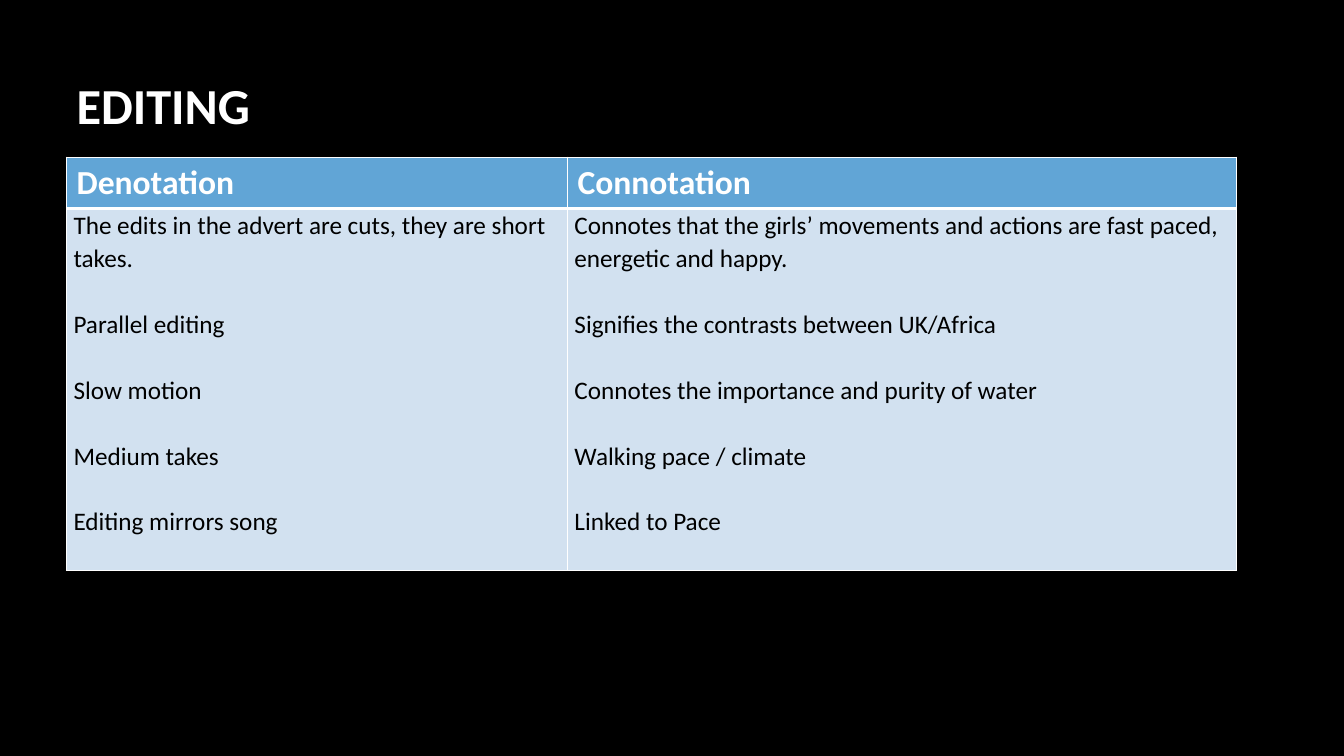
from lxml import etree
from pptx import Presentation
from pptx import util as u
from pptx.dml import color
from pptx.enum import text
from pptx.oxml import ns

GRID = 0.1
SLIDE_COLUMNS, SLIDE_ROWS = 133.33, 75
LEFT_MARGIN = 6.6
TABLE_TOP = 15.6
TABLE_COLUMNS = (49.7, 66.4)
TABLE_ROWS = (5.1, 35.9)

TITLE_FORMAT = {"name": "Calibri", "size": u.Pt(36), "bold": True, "color": "FFFFFF"}
HEADER_FORMAT = {**TITLE_FORMAT, "size": u.Pt(24)}
BODY_FORMAT = {"name": "Calibri", "size": u.Pt(18), "bold": False, "color": "000000"}
BODY_MARGINS = {"margin_left": 0.7, "margin_right": 0.7, "margin_top": 0, "margin_bottom": 0}
LINE_SPACING = 1.07
PARAGRAPH_GAP = u.Pt(23.5)

HEADINGS = ("Denotation", "Connotation")
POINTS = (
    (
        "The edits in the advert are cuts, they are short takes.",
        "Parallel editing",
        "Slow motion",
        "Medium takes",
        "Editing mirrors song",
    ),
    (
        "Connotes that the girls’ movements and actions are fast paced, energetic and happy.",
        "Signifies the contrasts between UK/Africa",
        "Connotes the importance and purity of water",
        "Walking pace / climate",
        "Linked to Pace",
    ),
)


def units(count):
    """Convert a number of grid columns or rows to a length."""
    return u.Inches(count * GRID)


def paint(fill, hex_color):
    """Give a fill one solid colour."""
    fill.solid()
    fill.fore_color.rgb = color.RGBColor.from_string(hex_color)


def format_font(font, values):
    """Apply a dict of format values to a font."""
    for name, value in values.items():
        if name == "color":
            paint(font.fill, value)
        else:
            setattr(font, name, value)


def add_title(slide, wording):
    """Place and format the title placeholder."""
    title = slide.shapes.title
    box = {"left": LEFT_MARGIN, "top": 2.4, "width": 110.8, "height": 15.9}
    for name, count in box.items():
        setattr(title, name, units(count))
    frame = title.text_frame
    frame.text = wording
    frame.auto_size = text.MSO_AUTO_SIZE.NONE
    frame.vertical_anchor = text.MSO_ANCHOR.MIDDLE
    paragraph = frame.paragraphs[0]
    paragraph.alignment = text.PP_ALIGN.LEFT
    format_font(paragraph.runs[0].font, TITLE_FORMAT)


def add_borders(cell, widths):
    """Draw white borders whose widths in points are keyed by side."""
    properties = cell._tc.get_or_add_tcPr()
    for index, side in enumerate("LRTB"):
        line = etree.Element(ns.qn(f"a:ln{side}"), w=str(u.Pt(widths.get(side, 1))))
        solid = etree.SubElement(line, ns.qn("a:solidFill"))
        etree.SubElement(solid, ns.qn("a:srgbClr"), val="FFFFFF")
        properties.insert(index, line)


def fill_header(cell, heading):
    """Write and style one heading cell."""
    cell.text = heading
    format_font(cell.text_frame.paragraphs[0].runs[0].font, HEADER_FORMAT)
    paint(cell.fill, "61A5D6")
    add_borders(cell, {"B": 3})


def fill_body(cell, points):
    """Write spaced points into one body cell."""
    cell.text = "\n".join(points)
    for name, count in BODY_MARGINS.items():
        setattr(cell, name, units(count))
    for index, paragraph in enumerate(cell.text_frame.paragraphs):
        paragraph.line_spacing = LINE_SPACING
        paragraph.space_before = PARAGRAPH_GAP if index else u.Pt(0)
        format_font(paragraph.runs[0].font, BODY_FORMAT)
    paint(cell.fill, "D2E1F0")
    add_borders(cell, {"T": 3})


def add_analysis_table(slide):
    """Add the table of denotations and connotations."""
    area = (LEFT_MARGIN, TABLE_TOP, sum(TABLE_COLUMNS), sum(TABLE_ROWS))
    table = slide.shapes.add_table(2, 2, *map(units, area)).table
    for row, height in zip(table.rows, TABLE_ROWS):
        row.height = units(height)
    for index, width in enumerate(TABLE_COLUMNS):
        table.columns[index].width = units(width)
        fill_header(table.cell(0, index), HEADINGS[index])
        fill_body(table.cell(1, index), POINTS[index])


def main():
    """Build and save the editing slide."""
    presentation = Presentation()
    presentation.slide_width = units(SLIDE_COLUMNS)
    presentation.slide_height = units(SLIDE_ROWS)
    slide = presentation.slides.add_slide(presentation.slide_layouts.get_by_name("Title Only"))
    paint(slide.background.fill, "000000")
    add_title(slide, "EDITING")
    add_analysis_table(slide)
    presentation.save("out.pptx")


if __name__ == "__main__":
    main()
